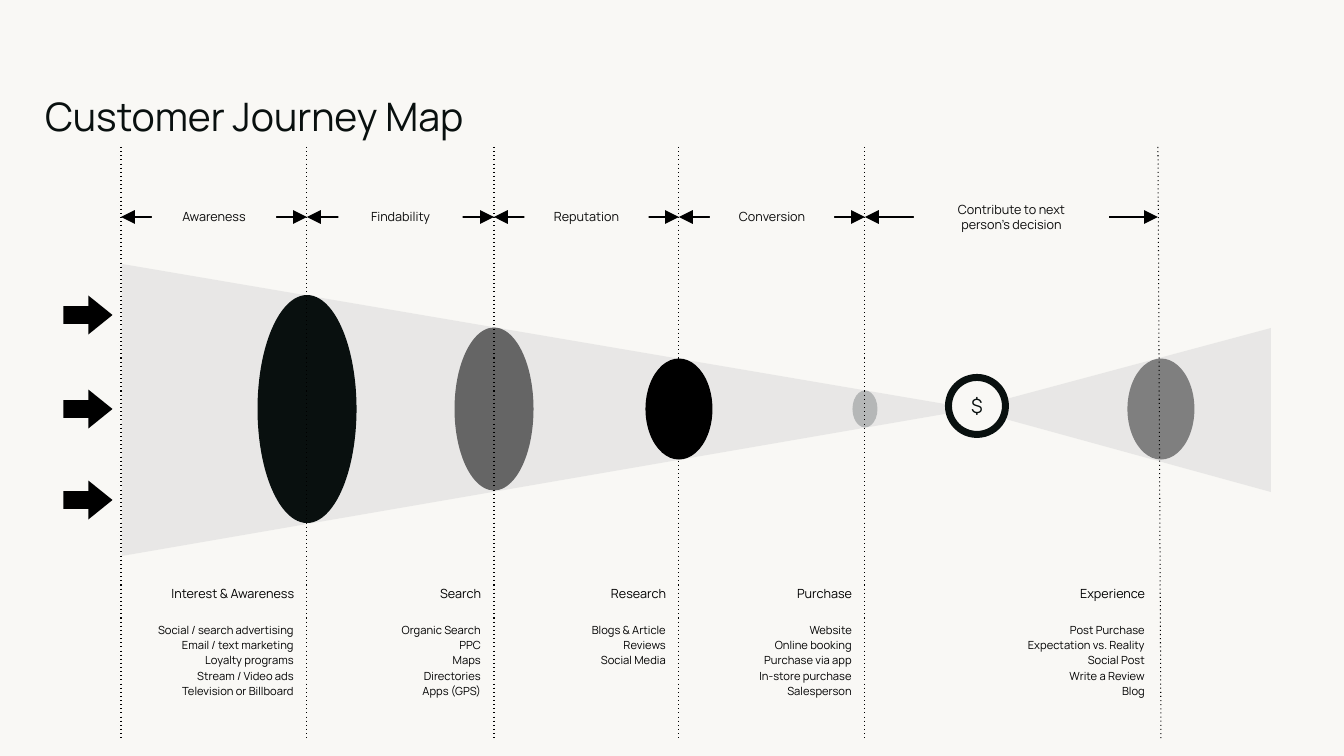
import pptx
import pptx.dml.color
import pptx.enum.shapes
import pptx.enum.text
import pptx.oxml.ns
import pptx.util
from lxml import etree

SHAPE = pptx.enum.shapes.MSO_SHAPE
ALIGN = pptx.enum.text.PP_ALIGN
ANCHOR = pptx.enum.text.MSO_ANCHOR

TITLE = "Customer Journey Map"
FONT = "Manrope"
PAPER, INK, BLACK, LABEL_INK, FUNNEL_GREY = "F9F8F5", "09100F", "000000", "0C0C0C", "D8D8D8"

# Each stage ends at a divider: label lines, label width, divider x at top and
# bottom, lens (width, height, colour), touchpoint heading, touchpoints
STAGES = [
    (["Awareness"], 124, 307, 307, (99, 228, INK), "Interest & Awareness",
     ["Social / search advertising", "Email / text marketing", "Loyalty programs",
      "Stream / Video ads", "Television or Billboard"]),
    (["Findability"], 124, 494, 494, (79, 163, "656565"), "Search",
     ["Organic Search", "PPC", "Maps", "Directories", "Apps (GPS)"]),
    (["Reputation"], 124, 679, 679, (67, 101, BLACK), "Research",
     ["Blogs & Article", "Reviews", "Social Media"]),
    (["Conversion"], 124, 865, 865, (25, 37, "B5B7B7"), "Purchase",
     ["Website", "Online booking", "Purchase via app", "In-store purchase", "Salesperson"]),
    (["Contribute to next", "person’s decision"], 195, 1158, 1161, (67, 101, "7F7F7F"),
     "Experience",
     ["Post Purchase", "Expectation vs. Reality", "Social Post", "Write a Review", "Blog"]),
]
FUNNELS = [
    [(974, 409), (122, 264), (122, 556)],
    [(969, 409), (1271, 328), (1271, 492)],
]
ENTRY_ARROW_CENTRES = [315, 409, 500]
START_X = 121
AXIS_Y = 409
STAGE_Y = 217
DIVIDER_TOP, DIVIDER_BOTTOM = 147, 739
TEXT_GAP = 13


def px(length):
    return pptx.util.Emu(round(length * 914400 / 100.8))


def rgb(colour):
    return pptx.dml.color.RGBColor.from_string(colour)


def write(shape, lines, size, colour, align, anchor=ANCHOR.TOP, spacing=1.0):
    frame = shape.text_frame
    frame.margin_left = frame.margin_right = frame.margin_top = frame.margin_bottom = 0
    frame.word_wrap = True
    frame.auto_size = pptx.enum.text.MSO_AUTO_SIZE.NONE
    frame.vertical_anchor = anchor
    frame.text = "\n".join(lines)
    for paragraph in frame.paragraphs:
        paragraph.alignment = align
        paragraph.line_spacing = spacing
        for run in paragraph.runs:
            run.font.name = FONT
            run.font.size = pptx.util.Pt(size)
            run.font.color.rgb = rgb(colour)


def paint(shape, fill):
    shape.shadow.inherit = False
    shape.fill.solid()
    shape.fill.fore_color.rgb = rgb(fill)
    shape.line.fill.background()


def add_centred(kind, x, y, width, height, fill):
    """Add a preset shape whose middle is at x, y."""
    shape = slide.shapes.add_shape(
        kind, px(x - width / 2), px(y - height / 2), px(width), px(height))
    paint(shape, fill)
    return shape


def add_funnel(corners):
    builder = slide.shapes.build_freeform(*corners[0], scale=914400 / 100.8)
    builder.add_line_segments(corners[1:], close=True)
    funnel = builder.convert_to_shape()
    paint(funnel, FUNNEL_GREY)
    colour = funnel.fill._xPr.find(".//" + pptx.oxml.ns.qn("a:srgbClr"))
    etree.SubElement(colour, pptx.oxml.ns.qn("a:alpha"), val="50000")


def add_line(x1, y1, x2, y2):
    line = slide.shapes.add_connector(
        pptx.enum.shapes.MSO_CONNECTOR.STRAIGHT, px(x1), px(y1), px(x2), px(y2))
    line.line.color.rgb = rgb(BLACK)
    line.line.width = pptx.util.Pt(0.75)
    etree.SubElement(line._element.spPr, pptx.oxml.ns.qn("a:effectLst"))
    return line


def add_divider(top_x, bottom_x):
    divider = add_line(top_x, DIVIDER_TOP, bottom_x, DIVIDER_BOTTOM)
    etree.SubElement(divider.line._get_or_add_ln(), pptx.oxml.ns.qn("a:prstDash"), val="dot")


def add_stage(left, right, label, label_width):
    span = add_line(left, STAGE_Y, right, STAGE_Y)
    for end in ("a:headEnd", "a:tailEnd"):
        etree.SubElement(span.line._get_or_add_ln(), pptx.oxml.ns.qn(end),
                         type="triangle", w="lg", len="lg")
    plate = add_centred(SHAPE.ROUNDED_RECTANGLE, (left + right) / 2, STAGE_Y,
                        label_width, 53, PAPER)
    plate.adjustments[0] = 0.11
    write(plate, label, 9, LABEL_INK, ALIGN.CENTER, ANCHOR.MIDDLE)


def add_right_text(right, top, width, height, lines, size, spacing=1.0):
    box = slide.shapes.add_textbox(px(right - width), px(top), px(width), px(height))
    write(box, lines, size, BLACK, ALIGN.RIGHT, spacing=spacing)


deck = pptx.Presentation()
deck.slide_width, deck.slide_height = px(1344), px(756)
slide = deck.slides.add_slide(deck.slide_layouts[5])
slide.background.fill.solid()
slide.background.fill.fore_color.rgb = rgb(PAPER)

title = slide.shapes.title
title.left, title.top, title.width, title.height = px(45), px(92), px(930), px(51)
write(title, [TITLE], 28, INK, ALIGN.LEFT)

for corners in FUNNELS:
    add_funnel(corners)
for centre in ENTRY_ARROW_CENTRES:
    entry = add_centred(SHAPE.RIGHT_ARROW, 88, centre, 49, 39, BLACK)
    entry.adjustments[0], entry.adjustments[1] = 0.46, 0.62

add_divider(START_X, START_X)
stage_left = START_X
for label, label_width, top_x, bottom_x, lens, heading, touchpoints in STAGES:
    lens_width, lens_height, lens_colour = lens
    add_centred(SHAPE.OVAL, bottom_x, AXIS_Y, lens_width, lens_height, lens_colour)
    add_divider(top_x, bottom_x)
    add_stage(stage_left, top_x, label, label_width)
    add_right_text(top_x - TEXT_GAP, 586, 174, 19, [heading], 9)
    add_right_text(top_x - TEXT_GAP, 621, 157, 18 * len(touchpoints), touchpoints, 8, 1.15)
    stage_left = top_x

sale = add_centred(SHAPE.OVAL, 977, 406, 57, 57, PAPER)
sale.line.color.rgb = rgb(INK)
sale.line.width = pptx.util.Pt(5)
write(sale, ["$"], 14, INK, ALIGN.CENTER, ANCHOR.MIDDLE)

deck.save("out.pptx")
